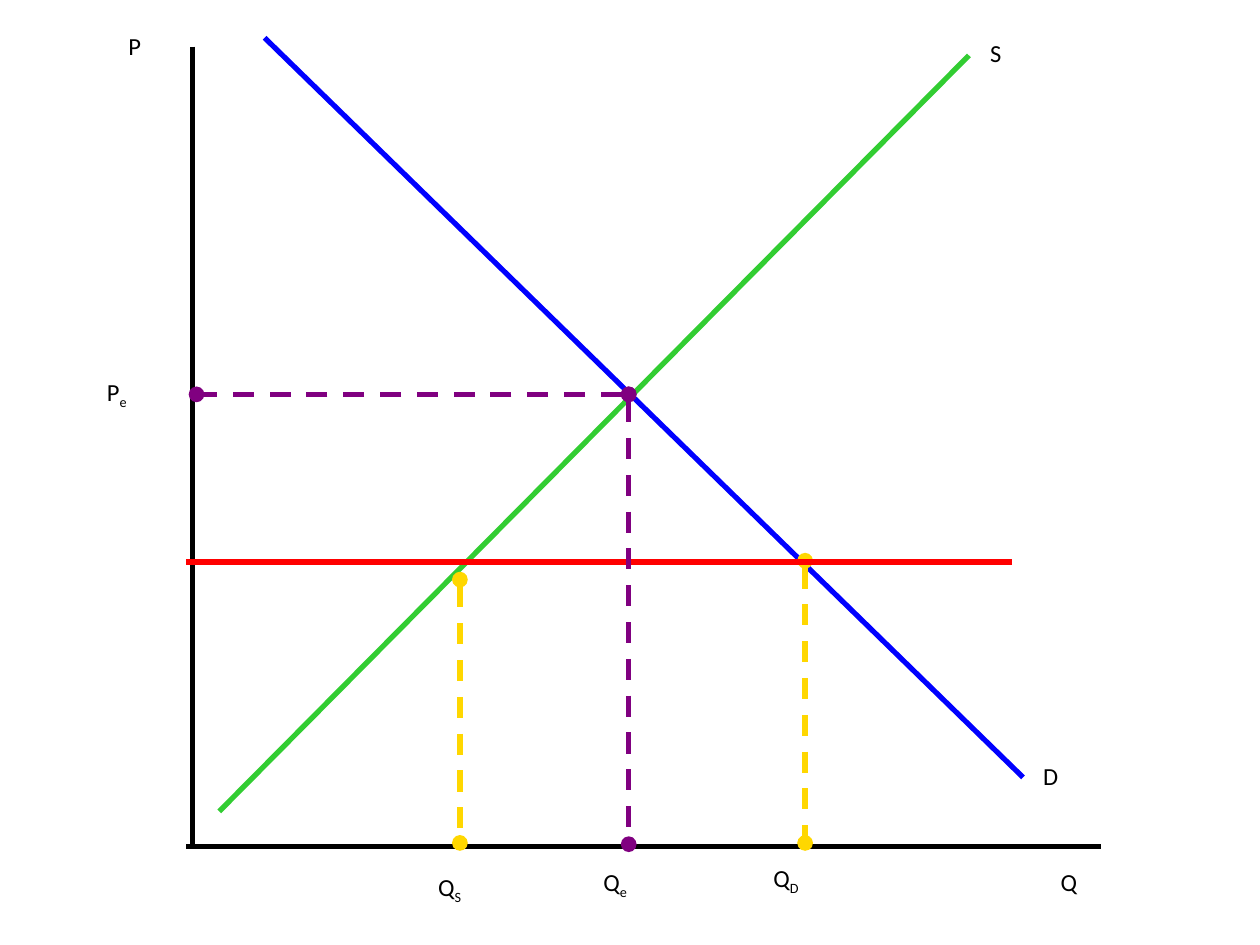
from lxml import etree
from pptx import Presentation
from pptx.dml.color import RGBColor
from pptx.enum.dml import MSO_LINE
from pptx.enum.shapes import MSO_CONNECTOR
from pptx.enum.text import MSO_ANCHOR
from pptx.oxml.ns import qn
from pptx.util import Inches, Pt

STRAIGHT = MSO_CONNECTOR.STRAIGHT
DASH = MSO_LINE.DASH
TOP = MSO_ANCHOR.TOP

COLORS = {
    "axis": "000000",
    "demand": "0000FF",
    "supply": "32CD32",
    "ceiling": "FF0000",
    "equilibrium": "800080",
    "quantity": "FFD700",
    "text": "000000",
}
FONT = "Calibri"
FONT_SIZE = 14
LINE_WIDTH = 3

# The slide is a grid of 100 columns by 75 rows
COLUMNS, ROWS = 100, 75
SLIDE_WIDTH, SLIDE_HEIGHT = Inches(10), Inches(7.5)

# Shared positions, in columns and rows
AXIS_LEFT, AXIS_BOTTOM = 15.3, 67.2
AXIS_START = 14.8
EQUILIBRIUM = (49.9, 31.3)
CEILING_ROW = 44.6
LABEL_ROW = 68.3
LABEL_HEIGHT = 6.3


def x(column):
    return round(SLIDE_WIDTH * column / COLUMNS)


def y(row):
    return round(SLIDE_HEIGHT * row / ROWS)


def add_line(slide, start, end, color):
    connector = slide.shapes.add_connector(
        STRAIGHT, x(start[0]), y(start[1]), x(end[0]), y(end[1]))
    connector.line.color.rgb = RGBColor.from_string(COLORS[color])
    connector.line.width = Pt(LINE_WIDTH)
    etree.SubElement(connector._element.spPr, qn("a:effectLst"))
    return connector


def add_guide(slide, start, end, color):
    """Dashed line with a dot at each end."""
    connector = add_line(slide, start, end, color)
    connector.line.dash_style = DASH
    outline = connector._element.spPr.find(qn("a:ln"))
    for tag in ("a:headEnd", "a:tailEnd"):
        etree.SubElement(outline, qn(tag), type="oval")


def add_label(slide, column, row, width, letter, subscript=""):
    box = slide.shapes.add_textbox(x(column), y(row), x(width), y(LABEL_HEIGHT))
    frame = box.text_frame
    frame.word_wrap = True
    frame.vertical_anchor = TOP
    paragraph = frame.paragraphs[0]
    for text, baseline in ((letter, None), (subscript, "-25000")):
        if not text:
            continue
        run = paragraph.add_run()
        run.text = text
        run.font.name = FONT
        run.font.size = Pt(FONT_SIZE)
        run.font.color.rgb = RGBColor.from_string(COLORS["text"])
        if baseline:
            run.font._element.set("baseline", baseline)


def main():
    presentation = Presentation()
    presentation.slide_width = SLIDE_WIDTH
    presentation.slide_height = SLIDE_HEIGHT
    slide = presentation.slides.add_slide(presentation.slide_layouts[6])

    # Axes
    add_line(slide, (AXIS_LEFT, 3.7), (AXIS_LEFT, AXIS_BOTTOM), "axis")
    add_line(slide, (AXIS_START, AXIS_BOTTOM), (87.4, AXIS_BOTTOM), "axis")

    # Demand and supply curves
    add_line(slide, (21, 3), (81.2, 61.7), "demand")
    add_line(slide, (17.4, 64.4), (76.9, 4.4), "supply")

    # Quantities demanded and supplied, under the price ceiling
    for column, top in ((63.9, 44.5), (36.5, 46)):
        add_guide(slide, (column, top), (column, 66.9), "quantity")
    add_line(slide, (AXIS_START, CEILING_ROW), (80.3, CEILING_ROW), "ceiling")

    # Equilibrium price and quantity
    for end in ((15.6, EQUILIBRIUM[1]), (EQUILIBRIUM[0], 67)):
        add_guide(slide, EQUILIBRIUM, end, "equilibrium")

    # Labels: column, row, width, letter, subscript
    for label in (
        (9.2, 2, 7.9, "P"),
        (77.6, 2.5, 7.9, "S"),
        (81.8, 59.9, 8.8, "D"),
        (83.2, LABEL_ROW, 8.8, "Q"),
        (7.5, 29.4, 10.2, "P", "e"),
        (46.9, LABEL_ROW, 10.7, "Q", "e"),
        (33.8, 68.7, 10.7, "Q", "S"),
        (60.4, 68, 11.2, "Q", "D"),
    ):
        add_label(slide, *label)

    presentation.save("out.pptx")


if __name__ == "__main__":
    main()
